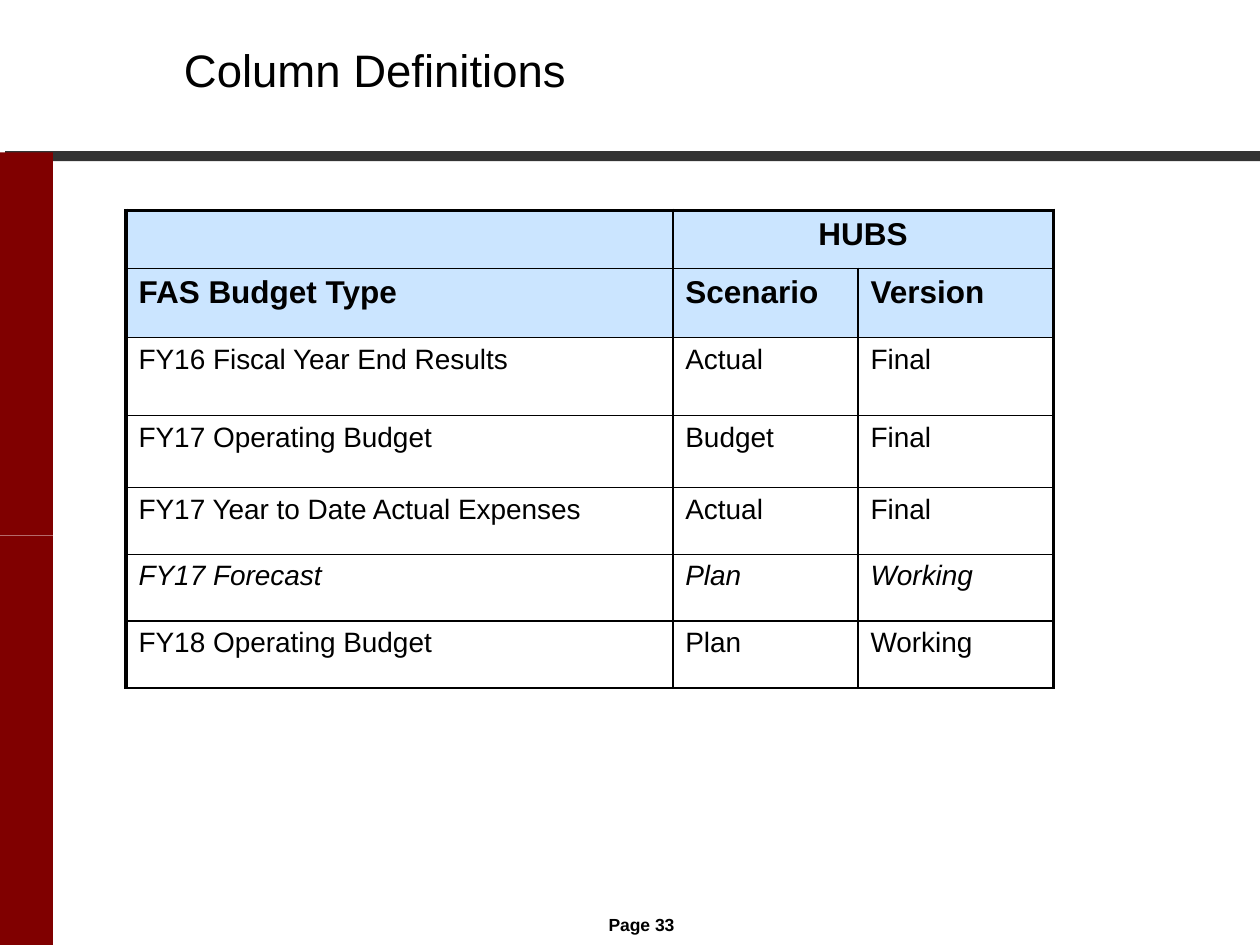
from lxml.etree import SubElement as Sub
from pptx import Presentation
from pptx.dml.color import RGBColor as RGB
from pptx.enum.shapes import MSO_SHAPE as SHAPE
from pptx.enum.text import MSO_ANCHOR as ANCHOR, MSO_AUTO_SIZE as FIT, PP_ALIGN as ALIGN
from pptx.oxml.ns import qn
from pptx.util import Inches, Pt

TITLE = "Column Definitions"
PAGE = "Page 33"
ROWS = [
    ("", "HUBS", ""),
    ("FAS Budget Type", "Scenario", "Version"),
    ("FY16 Fiscal Year End Results", "Actual", "Final"),
    ("FY17 Operating Budget", "Budget", "Final"),
    ("FY17 Year to Date Actual Expenses", "Actual", "Final"),
    ("FY17 Forecast", "Plan", "Working"),
    ("FY18 Operating Budget", "Plan", "Working"),
]
HEADS = 2
SLANTED = 5
WIDTHS = [4.34, 1.47, 1.55]
HEIGHTS = [0.46, 0.55, 0.62, 0.57, 0.53, 0.53, 0.53]
COLORS = {"ink": "000000", "rule": "333333", "band": "800000", "head": "99CCFF"}
BARS = [
    ("rule", 0.04, 1.2, 9.97, 0.08),
    ("band", 0, 4.25, 0.42, 3.25),
    ("band", 0, 1.21, 0.42, 3.04),
]
THIN, THICK = 1, 2.25


def color(key):
    return RGB.from_string(COLORS[key])


def add_run(para, text, size, bold=False, italic=False):
    run = para.add_run()
    run.text = text
    font = run.font
    font.name, font.size = "Arial", Pt(size)
    font.bold, font.italic = bold, italic
    font.color.rgb = color("ink")


def add_edges(cell, sides):
    props = cell._tc.get_or_add_tcPr()
    for side, width in sides.items():
        line = Sub(props, qn("a:ln" + side), w=str(Pt(width)))
        fill = Sub(line, qn("a:solidFill"))
        Sub(fill, qn("a:srgbClr"), val=COLORS["ink"])


def shade(cell):
    cell.fill.solid()
    cell.fill.fore_color.rgb = color("head")
    tint = cell._tc.tcPr.find(qn("a:solidFill"))[0]
    Sub(tint, qn("a:alpha"), val="50000")


def add_bars(slide):
    for key, *box in BARS:
        bar = slide.shapes.add_shape(SHAPE.RECTANGLE, *map(Inches, box))
        bar.shadow.inherit = False
        bar.fill.solid()
        bar.fill.fore_color.rgb = color(key)
        bar.line.fill.background()


def add_title(slide):
    title = slide.shapes.title
    title.left, title.top, title.width, title.height = map(Inches, (1.36, 0, 8.42, 1.14))
    frame = title.text_frame
    frame.auto_size = FIT.NONE
    frame.vertical_anchor = ANCHOR.MIDDLE
    para = frame.paragraphs[0]
    para.alignment = ALIGN.LEFT
    para.line_spacing = Pt(28)
    add_run(para, TITLE, 26)


def add_page(slide):
    frame = slide.shapes.add_textbox(*map(Inches, (4.83, 7.22, 0.8, 0.2))).text_frame
    frame.margin_left = frame.margin_right = frame.margin_top = frame.margin_bottom = 0
    frame.word_wrap = True
    para = frame.paragraphs[0]
    para.line_spacing = 1.2
    add_run(para, PAGE, 10, bold=True)


def add_grid(slide):
    box = map(Inches, (1, 1.67, sum(WIDTHS), sum(HEIGHTS)))
    table = slide.shapes.add_table(len(ROWS), len(WIDTHS), *box).table
    table.first_row = table.horz_banding = False
    for col, width in zip(table.columns, WIDTHS):
        col.width = Inches(width)
    for row, height in zip(table.rows, HEIGHTS):
        row.height = Inches(height)
    table.cell(0, 1).merge(table.cell(0, 2))
    for r, texts in enumerate(ROWS):
        for c, text in enumerate(texts):
            cell = table.cell(r, c)
            last = c == len(WIDTHS) - 1 or cell.is_merge_origin
            add_edges(cell, {
                "L": THIN if c else THICK,
                "R": THICK if last else THIN,
                "T": THIN if r else THICK,
                "B": THIN,
            })
            head = r < HEADS
            if head:
                shade(cell)
            else:
                cell.fill.background()
            para = cell.text_frame.paragraphs[0]
            if cell.is_merge_origin:
                para.alignment = ALIGN.CENTER
            if text:
                add_run(para, text, 18 if head else 16, head, r == SLANTED)


def main():
    deck = Presentation()
    deck.slide_width, deck.slide_height = Inches(10), Inches(7.5)
    slide = deck.slides.add_slide(deck.slide_layouts[5])
    add_page(slide)
    add_bars(slide)
    add_title(slide)
    add_grid(slide)
    deck.save("out.pptx")


if __name__ == "__main__":
    main()
